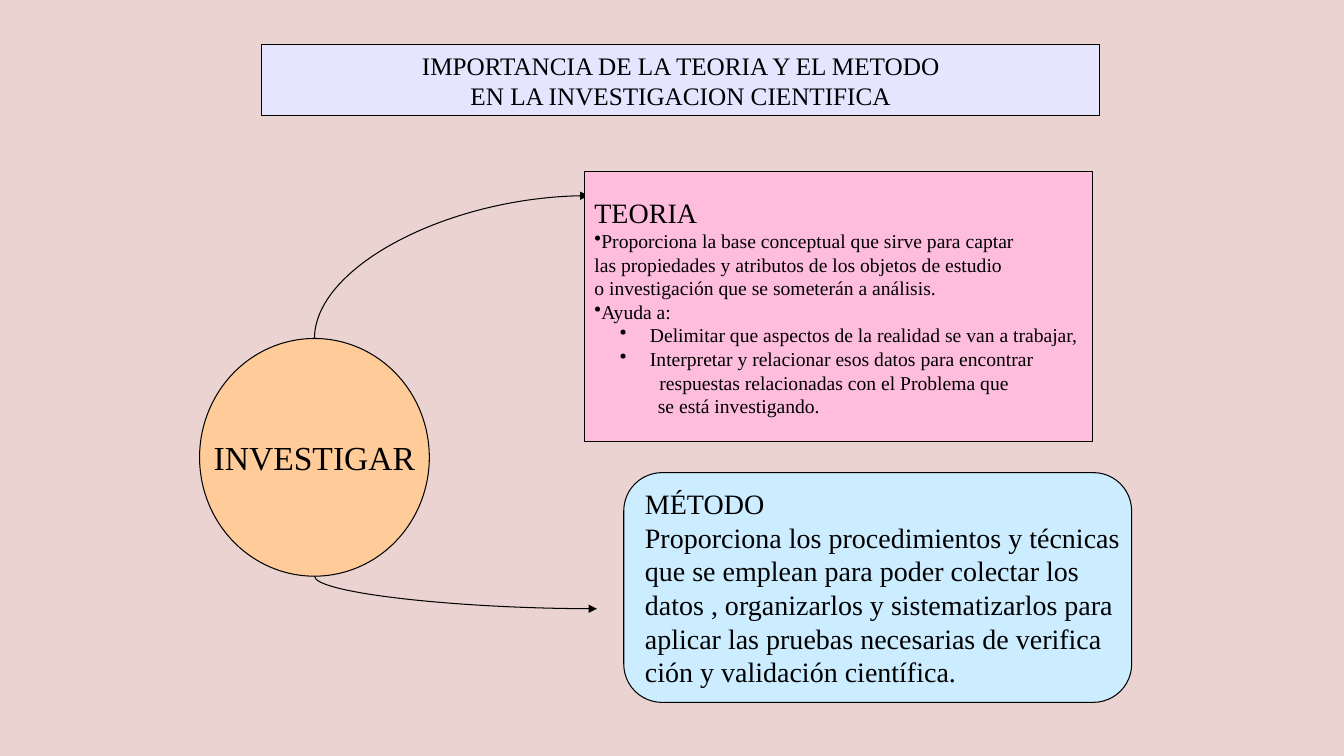
from dataclasses import dataclass

from lxml import etree
from pptx import Presentation
from pptx.dml.color import RGBColor
from pptx.enum.shapes import MSO_CONNECTOR, MSO_SHAPE
from pptx.enum.text import MSO_ANCHOR, MSO_AUTO_SIZE, PP_ALIGN
from pptx.oxml.ns import qn
from pptx.shapes.autoshape import Shape
from pptx.slide import Slide
from pptx.util import Cm, Pt

RECTANGLE = MSO_SHAPE.RECTANGLE
ROUNDED = MSO_SHAPE.ROUNDED_RECTANGLE
OVAL = MSO_SHAPE.OVAL
CURVE = MSO_CONNECTOR.CURVE
MIDDLE = MSO_ANCHOR.MIDDLE
NO_AUTOFIT = MSO_AUTO_SIZE.NONE
LEFT = PP_ALIGN.LEFT
CENTER = PP_ALIGN.CENTER

FONT = "Times New Roman"
BLACK = "000000"
TITLE_ONLY = 5


@dataclass(frozen=True)
class Line:
    text: str
    size: int
    bullet: bool = False
    margin: float = 0
    indent: float = 0
    level: int = 0


@dataclass(frozen=True)
class Panel:
    left: float
    top: float
    width: float
    height: float
    fill: str
    lines: tuple[Line, ...]
    align: PP_ALIGN = LEFT
    outline: MSO_SHAPE = RECTANGLE


@dataclass(frozen=True)
class Arrow:
    start: tuple[float, float]
    end: tuple[float, float]


HEADING = Panel(6.6, 1.12, 21.11, 1.8, "E5E5FF", (
    Line("IMPORTANCIA DE LA TEORIA Y EL METODO", 18),
    Line("EN LA INVESTIGACION CIENTIFICA", 18),
), CENTER)

INVESTIGAR = Panel(5.03, 8.53, 5.79, 5.99, "FFCC99",
                   (Line("INVESTIGAR", 24),), CENTER, OVAL)

TEORIA = Panel(14.73, 4.32, 12.8, 6.81, "FFBDDE", (
    Line("TEORIA", 20),
    Line("Proporciona la base conceptual que sirve para captar", 14, True),
    Line("las propiedades y atributos de los objetos de estudio", 14),
    Line("o investigación que se someterán a análisis.", 14),
    Line("Ayuda a:", 14, True),
    Line("Delimitar que aspectos de la realidad se van a trabajar,", 14, True, 1.4, -0.76, 1),
    Line("Interpretar y relacionar esos datos para encontrar", 14, True, 1.4, -0.76, 1),
    Line("respuestas relacionadas con el Problema que", 14, margin=1.64, level=1),
    Line("se está investigando.", 14, margin=1.6),
))

METODO = Panel(15.72, 11.91, 12.8, 5.79, "CCECFF", tuple(Line(text, 20) for text in (
    "MÉTODO",
    "Proporciona los procedimientos y técnicas",
    "que se emplean para poder colectar los",
    "datos , organizarlos y sistematizarlos para",
    "aplicar las pruebas necesarias de verifica",
    "ción y validación científica.",
)), outline=ROUNDED)

CIRCLE_MIDDLE = INVESTIGAR.left + INVESTIGAR.width / 2
ARROWS = (
    Arrow((CIRCLE_MIDDLE, INVESTIGAR.top), (14.83, 4.93)),
    Arrow((CIRCLE_MIDDLE, INVESTIGAR.top + INVESTIGAR.height), (15.04, 15.34)),
)


def color(value: str) -> RGBColor:
    return RGBColor.from_string(value)


def write_lines(shape: Shape, panel: Panel) -> None:
    frame = shape.text_frame
    frame.word_wrap = False
    frame.auto_size = NO_AUTOFIT
    frame.vertical_anchor = MIDDLE
    for index, line in enumerate(panel.lines):
        paragraph = frame.add_paragraph() if index else frame.paragraphs[0]
        paragraph.text = line.text
        paragraph.alignment = panel.align
        paragraph.level = line.level
        paragraph.font.name = FONT
        paragraph.font.size = Pt(line.size)
        paragraph.font.color.rgb = color(BLACK)
        properties = paragraph._p.get_or_add_pPr()
        properties.set("marL", str(Cm(line.margin)))
        properties.set("indent", str(Cm(line.indent)))
        if line.bullet:
            bullet = etree.Element(qn("a:buChar"), char="•")
            properties.insert(0, bullet)


def format_panel(shape: Shape, panel: Panel) -> None:
    shape.fill.solid()
    shape.fill.fore_color.rgb = color(panel.fill)
    shape.line.color.rgb = color(BLACK)
    shape.line.width = Pt(0.75)
    write_lines(shape, panel)


def draw_panel(slide: Slide, panel: Panel) -> None:
    shape = slide.shapes.add_shape(panel.outline, Cm(panel.left), Cm(panel.top),
                                   Cm(panel.width), Cm(panel.height))
    shape.shadow.inherit = False
    format_panel(shape, panel)


def draw_heading(slide: Slide, panel: Panel) -> None:
    title = slide.shapes.title
    title.left, title.top = Cm(panel.left), Cm(panel.top)
    title.width, title.height = Cm(panel.width), Cm(panel.height)
    format_panel(title, panel)


def draw_arrow(slide: Slide, arrow: Arrow) -> None:
    (x1, y1), (x2, y2) = arrow.start, arrow.end
    middle_x, middle_y = (x1 + x2) / 2, (y1 + y2) / 2
    half_x, half_y = (x2 - x1) / 2, (y2 - y1) / 2
    # The frame is turned a quarter, so its sides swap.
    curve = slide.shapes.add_connector(
        CURVE, Cm(middle_x + half_y), Cm(middle_y - half_x),
        Cm(middle_x - half_y), Cm(middle_y + half_x))
    curve.line.color.rgb = color(BLACK)
    curve.line.width = Pt(0.75)
    properties = curve._element.spPr
    properties.find(qn("a:xfrm")).set("rot", str(270 * 60000))
    properties.find(qn("a:prstGeom")).set("prst", "curvedConnector2")
    etree.SubElement(properties.find(qn("a:ln")), qn("a:tailEnd"), type="triangle")
    etree.SubElement(properties, qn("a:effectLst"))


def main() -> None:
    presentation = Presentation()
    presentation.slide_width = Cm(33.87)
    presentation.slide_height = Cm(19.05)
    slide = presentation.slides.add_slide(presentation.slide_layouts[TITLE_ONLY])
    slide.background.fill.solid()
    slide.background.fill.fore_color.rgb = color("EBD3D1")
    draw_heading(slide, HEADING)
    draw_panel(slide, INVESTIGAR)
    for arrow in ARROWS:
        draw_arrow(slide, arrow)
    for panel in (TEORIA, METODO):
        draw_panel(slide, panel)
    presentation.save("out.pptx")


if __name__ == "__main__":
    main()
